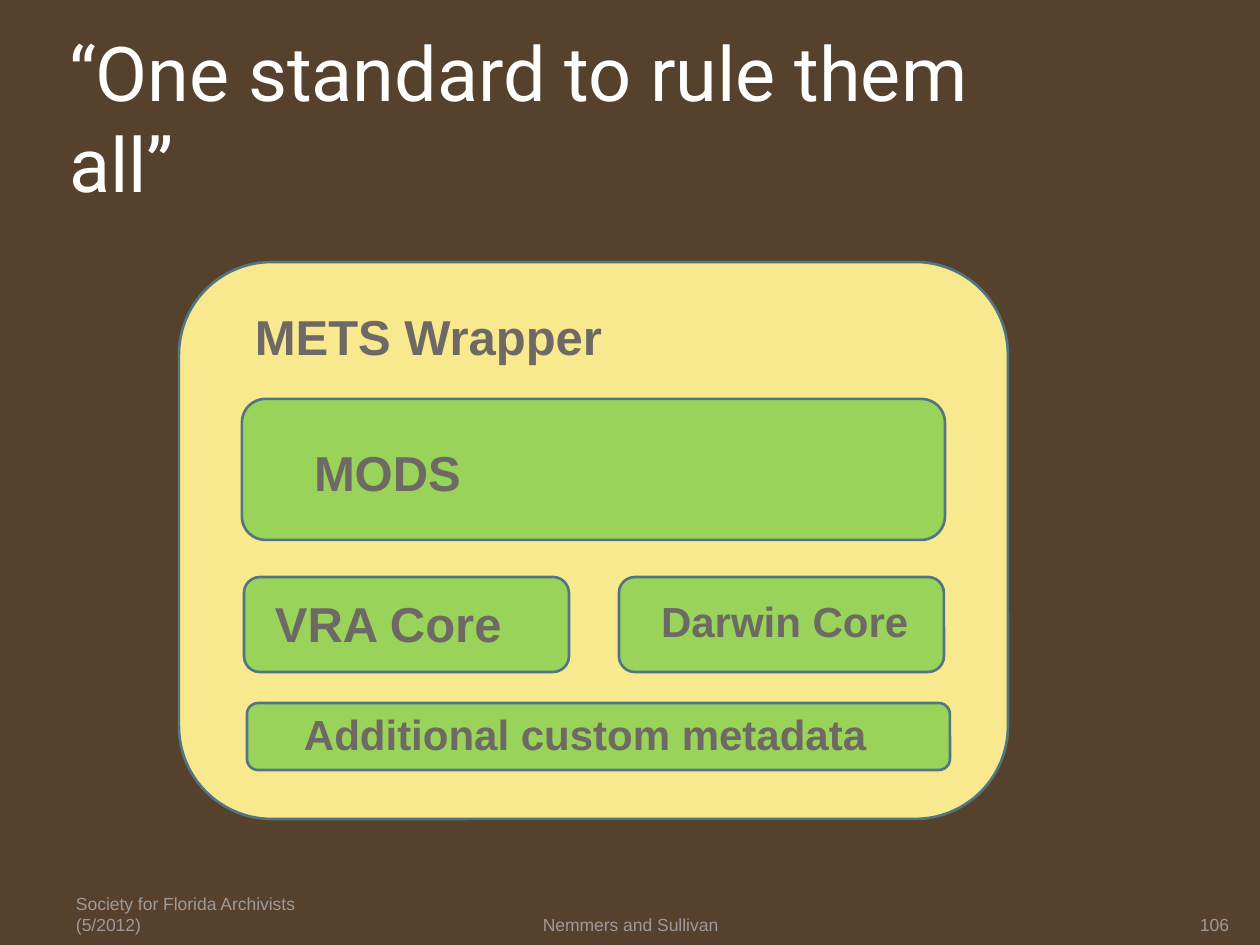
from pptx import Presentation
from pptx.dml.color import RGBColor
from pptx.enum.shapes import MSO_SHAPE
from pptx.enum.text import MSO_ANCHOR, MSO_AUTO_SIZE, PP_ALIGN
from pptx.util import Emu, Pt

PX = 914400 / 126
BROWN = RGBColor(0x56, 0x41, 0x2C)
WHITE = RGBColor(0xFF, 0xFF, 0xFF)
YELLOW = RGBColor(0xF9, 0xE9, 0x8E)
GREEN = RGBColor(0x99, 0xD3, 0x59)
TEAL = RGBColor(0x51, 0x76, 0x82)
GRAY = RGBColor(0x6E, 0x69, 0x64)
SILVER = RGBColor(0x9D, 0x9B, 0x9A)


def px(*values):
    """Turn px lengths into EMU."""
    return [Emu(round(v * PX)) for v in values]


def set_attrs(obj, values):
    """Set every attribute of the dict on the object."""
    for name, value in values.items():
        setattr(obj, name, value)


def write(sp, text, size, color, font="Arial", bold=False,
          align=PP_ALIGN.LEFT, insets=(13, 6, 13, 6), **frame):
    """Fill a shape with one formatted paragraph."""
    tf = sp.text_frame
    sides = ("margin_left", "margin_top", "margin_right", "margin_bottom")
    set_attrs(tf, {"word_wrap": True, **dict(zip(sides, px(*insets))), **frame})
    p = tf.paragraphs[0]
    p.alignment = align
    r = p.add_run()
    r.text = text
    set_attrs(r.font, {"name": font, "size": Pt(size), "bold": bold})
    r.font.color.rgb = color


def add_panel(s, x, y, w, h, color):
    """Add a rounded panel with a teal outline."""
    sp = s.shapes.add_shape(MSO_SHAPE.ROUNDED_RECTANGLE, *px(x, y, w, h))
    sp.shadow.inherit = False
    sp.fill.solid()
    sp.fill.fore_color.rgb = color
    sp.line.color.rgb = TEAL
    sp.line.width = Pt(1.5)


def add_title(s, x, y, w, h):
    """Place the slide title."""
    sp = s.shapes.title
    set_attrs(sp, dict(zip(("left", "top", "width", "height"), px(x, y, w, h))))
    write(sp, "“One standard to rule them all”", 43.2, WHITE, "Roboto",
          insets=(6, 6, 6, 6), vertical_anchor=MSO_ANCHOR.MIDDLE,
          auto_size=MSO_AUTO_SIZE.NONE)


def add_wrapper(s, x, y, w, h):
    """Draw the wrapper panel with its nested standards and labels."""
    add_panel(s, x, y, w, h, YELLOW)
    wide, half = w - 126, 325
    for dx, dy, pw, ph in ((63, 137, wide, 141), (65, 315, half, 95),
                           (440, 315, half, 95), (68, 441, wide, 67)):
        add_panel(s, x + dx, y + dy, pw, ph, GREEN)
    labels = (("METS Wrapper", 63, 38, 441, 28), ("MODS", 122, 175, 536, 28),
              ("VRA Core", 83, 326, 267, 28), ("Darwin Core", 469, 328, 296, 24),
              ("Additional custom metadata", 112, 441, 639, 24))
    for text, dx, dy, lw, size in labels:
        sp = s.shapes.add_textbox(*px(x + dx, y + dy, lw, 72 if size == 28 else 63))
        write(sp, text, size, GRAY, bold=True,
              auto_size=MSO_AUTO_SIZE.SHAPE_TO_FIT_TEXT)


def add_footer(s, x, y, w, h):
    """Place the event, the speakers and the slide number."""
    parts = (("Society for Florida Archivists (5/2012)", 0, 294, PP_ALIGN.LEFT, (13, 6, 13, 0)),
             ("Nemmers and Sullivan", 368, 399, PP_ALIGN.CENTER, (0, 6, 0, 0)),
             ("106", w - 105, 105, PP_ALIGN.RIGHT, (0, 0, 0, 0)))
    for text, dx, pw, align, insets in parts:
        sp = s.shapes.add_textbox(*px(x + dx, y, pw, h))
        write(sp, text, 10, SILVER, align=align, insets=insets,
              vertical_anchor=MSO_ANCHOR.BOTTOM)


def main():
    """Build and save the slide."""
    prs = Presentation()
    prs.slide_width, prs.slide_height = px(1260, 945)
    s = prs.slides.add_slide(prs.slide_layouts[5])
    s.background.fill.solid()
    s.background.fill.fore_color.rgb = BROWN
    add_title(s, 63, 38, 1029, 158)
    add_wrapper(s, 179, 262, 829, 557)
    add_footer(s, 63, 885, 1166, 50)
    prs.save("out.pptx")


if __name__ == "__main__":
    main()
